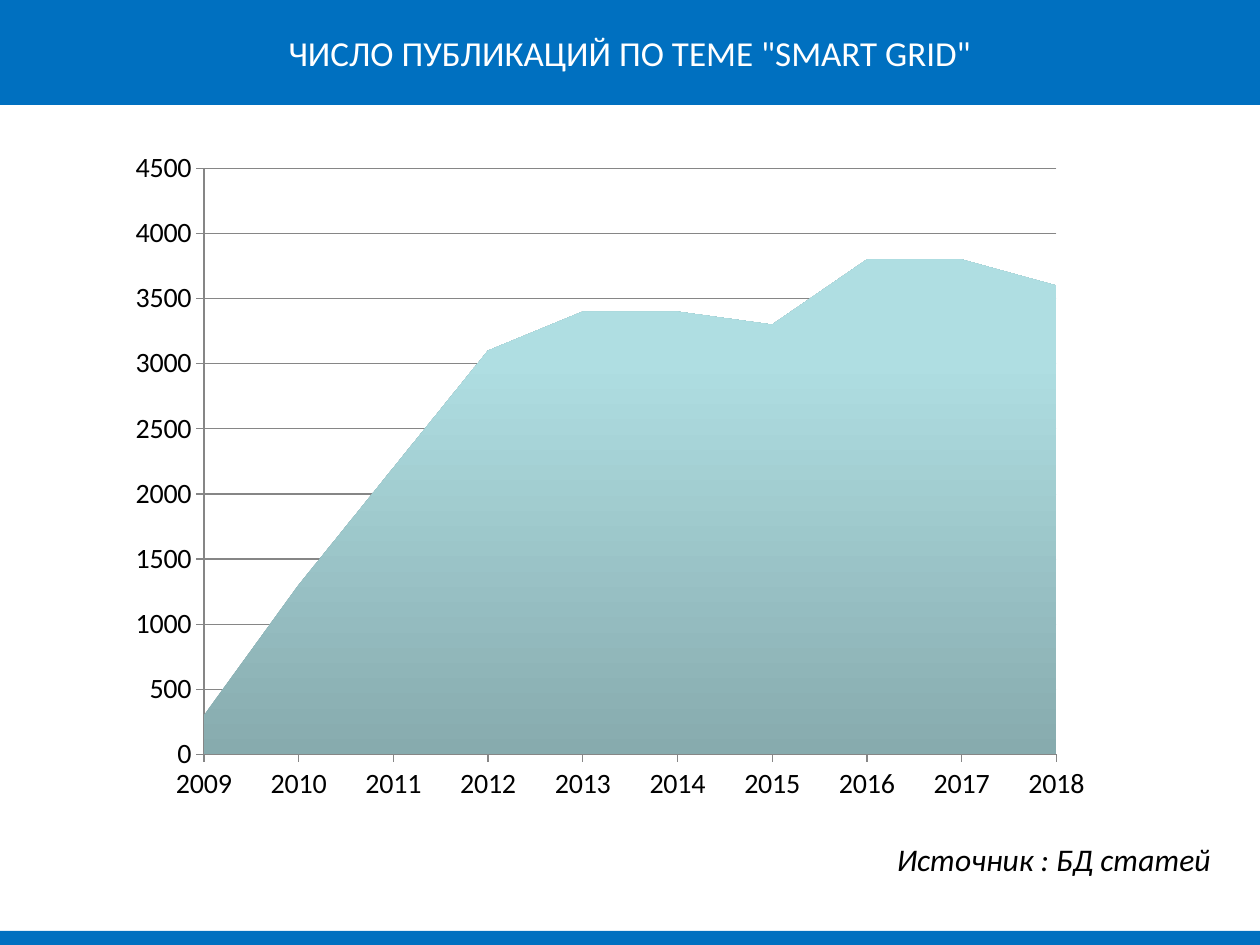
from copy import deepcopy

from pptx import Presentation
from pptx.chart.data import CategoryChartData
from pptx.dml.color import RGBColor
from pptx.enum.chart import XL_CHART_TYPE as ChartType, XL_TICK_MARK as Tick
from pptx.enum.shapes import MSO_SHAPE as Shape
from pptx.enum.text import MSO_ANCHOR as Anchor, PP_ALIGN as Align
from pptx.oxml import parse_xml
from pptx.oxml.ns import nsdecls
from pptx.util import Pt

FONT = "Calibri"
BLUE, WHITE, BLACK, GREY = "0070C0", "FFFFFF", "000000", "868686"


def color(value):
    return RGBColor.from_string(value)


def write(box, text, size, ink, align, italic=None):
    box.text_frame.word_wrap = True
    box.text_frame.text = text
    para = box.text_frame.paragraphs[0]
    para.alignment = align
    font = para.runs[0].font
    font.name, font.size, font.italic = FONT, Pt(size), italic
    font.color.rgb = color(ink)


deck = Presentation()
deck.slide_width, deck.slide_height = Pt(720), Pt(540)
page = deck.slides.add_slide(deck.slide_layouts[5])

# Header and footer bands
for left, top, width, height in [(0, -2, 720, 62), (0, 532, 724, 8)]:
    band = page.shapes.add_shape(Shape.RECTANGLE, Pt(left), Pt(top), Pt(width), Pt(height))
    band.shadow.inherit = False
    band.fill.solid()
    band.fill.fore_color.rgb = color(BLUE)
    band.line.fill.background()

# Title, brought in front of the header band
title = page.shapes.title
title.left, title.top, title.width, title.height = Pt(0), Pt(0), Pt(720), Pt(60.5)
write(title, 'ЧИСЛО ПУБЛИКАЦИЙ ПО ТЕМЕ "SMART GRID"', 20, WHITE, Align.CENTER)
title.text_frame.vertical_anchor = Anchor.MIDDLE
page.shapes._spTree.append(title._element)

# Area chart of publications per year
data = CategoryChartData()
data.categories = [str(year) for year in range(2009, 2019)]
data.add_series("Series 1", [300, 1300, 2200, 3100, 3400, 3400, 3300, 3800, 3800, 3600])
chart = page.shapes.add_chart(
    ChartType.AREA, Pt(65.5), Pt(77), Pt(566.5), Pt(385), data).chart
chart.has_title = False
chart.has_legend = False
chart.font.name, chart.font.size = FONT, Pt(16)
chart.font.color.rgb = color(BLACK)

years, counts = chart.category_axis, chart.value_axis
counts.minimum_scale, counts.maximum_scale, counts.major_unit = 0, 4500, 500
counts.has_major_gridlines = True
years.has_major_gridlines = False
for axis in (years, counts):
    axis.major_tick_mark, axis.minor_tick_mark = Tick.OUTSIDE, Tick.NONE
for line in (years.format.line, counts.format.line, counts.major_gridlines.format.line):
    line.color.rgb = color(GREY)
    line.width = Pt(0.75)

# Fixed inner plot area
plot_area = chart._chartSpace.chart.plotArea
for old in plot_area.xpath("c:layout"):
    plot_area.remove(old)
places = "".join(f'<c:{name} val="{value}"/>' for name, value in [
    ("layoutTarget", "inner"), ("xMode", "edge"), ("yMode", "edge"),
    ("x", 0.09), ("y", 0.05), ("w", 0.86), ("h", 0.87)])
plot_area.insert(0, parse_xml(
    f'<c:layout {nsdecls("c")}><c:manualLayout>{places}</c:manualLayout></c:layout>'))

# Gradient from dark at the bottom to light at the top
series = chart.plots[0].series[0]
fill = series.format.fill
fill.gradient()
fill.gradient_angle = 90
stop_list = series._element.xpath(".//a:gsLst")[0]
stop_list.append(deepcopy(stop_list[-1]))
for stop, (position, shade) in zip(
        fill.gradient_stops, [(0, "87ABAE"), (0.8, "AFDEE2"), (1, "AFE0E4")]):
    stop.position = position
    stop.color.rgb = color(shade)
series.format.line.fill.background()

# Source note
source = page.shapes.add_textbox(Pt(229.5), Pt(476.5), Pt(469.5), Pt(31.5))
write(source, "Источник : БД статей", 18, BLACK, Align.RIGHT, italic=True)

deck.save("out.pptx")
